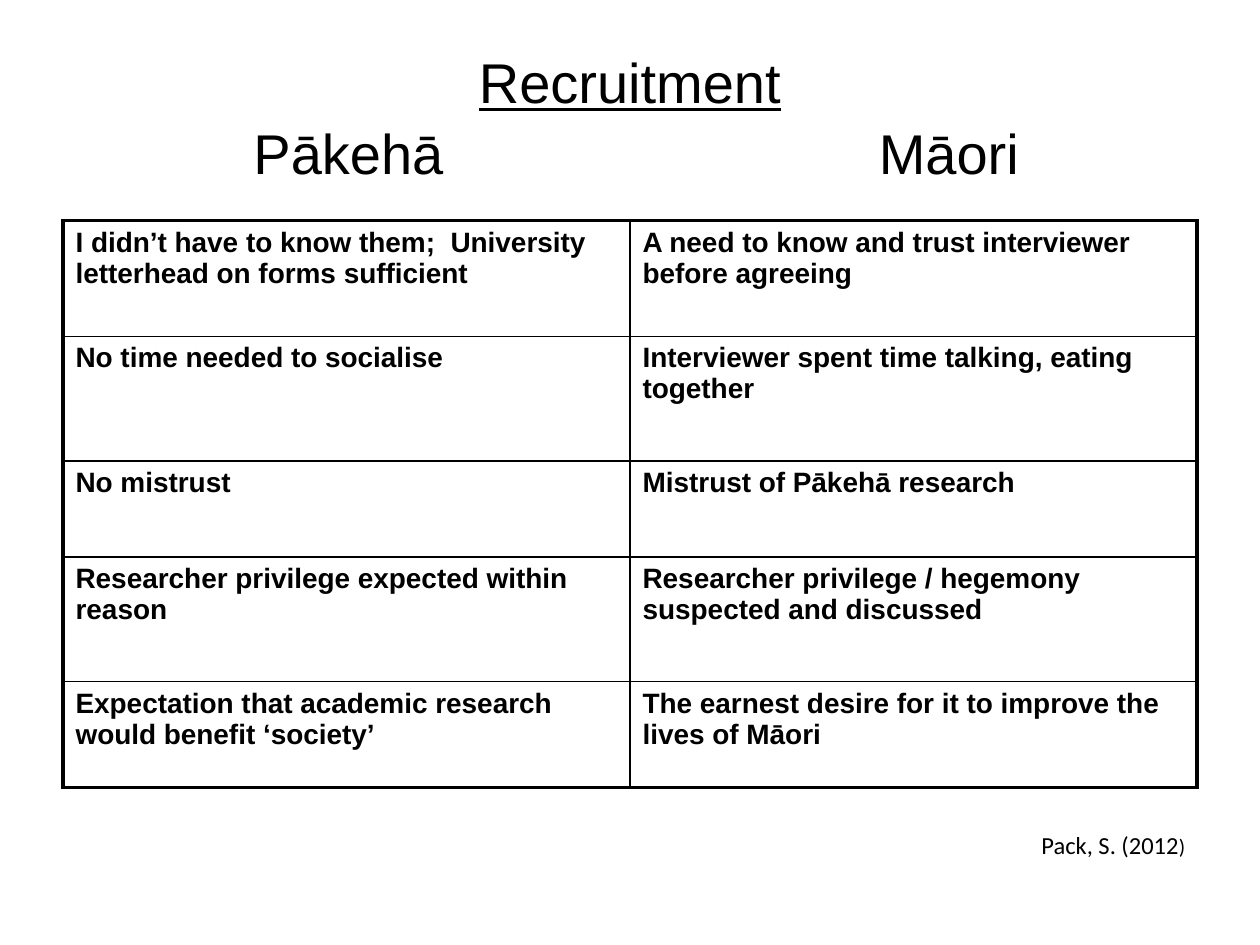
from pptx import Presentation
from pptx.dml.color import RGBColor
from pptx.enum.text import MSO_ANCHOR as Anchor, MSO_AUTO_SIZE as AutoSize, PP_ALIGN as Align
from pptx.oxml import parse_xml
from pptx.oxml.ns import nsdecls
from pptx.util import Pt

BLACK = RGBColor(0, 0, 0)
WHITE = RGBColor(255, 255, 255)
THIN, THICK = 1, 2.25

ROW_HEIGHTS = [66.24, 71.28, 54.72, 71.28, 60.48]
COMPARISONS = [
    ("I didn’t have to know them;  University letterhead on forms sufficient",
     "A need to know and trust interviewer before agreeing"),
    ("No time needed to socialise",
     "Interviewer spent time talking, eating together"),
    ("No mistrust", "Mistrust of Pākehā research"),
    ("Researcher privilege expected within reason",
     "Researcher privilege / hegemony suspected and discussed"),
    ("Expectation that academic research would benefit ‘society’",
     "The earnest desire for it to improve the lives of Māori"),
]


def set_borders(cell, **widths):
    """Draw the cell edges; widths maps lnL, lnR, lnT and lnB to points."""
    properties = cell._tc.get_or_add_tcPr()
    for index, (edge, width) in enumerate(widths.items()):
        properties.insert(index, parse_xml(
            f'<a:{edge} {nsdecls("a")} w="{Pt(width)}"><a:solidFill>'
            f'<a:srgbClr val="{BLACK}"/></a:solidFill></a:{edge}>'))


class SlideBuilder:
    heading_font = "Arial"
    source_font = "Calibri"

    def __init__(self, slide):
        self.slide = slide

    def style(self, target, name, size, bold=False):
        font = target.font
        font.name, font.size, font.bold = name, Pt(size), bold
        font.color.rgb = BLACK

    def title(self, heading, columns, centres, left, top, width, height):
        """Underlined heading above column names centred on tab stops."""
        title = self.slide.shapes.title
        title.left, title.top, title.width, title.height = map(Pt, (left, top, width, height))
        frame = title.text_frame
        frame.auto_size = AutoSize.NONE
        frame.vertical_anchor = Anchor.MIDDLE

        topic = frame.paragraphs[0]
        topic.text = heading
        topic.alignment = Align.CENTER
        self.style(topic, self.heading_font, 32)
        topic.font.underline = True

        names = frame.add_paragraph()
        names.text = "".join("\t" + column for column in columns)
        names.alignment = Align.LEFT
        names.space_before = Pt(2)
        self.style(names, self.heading_font, 32)
        stops = "".join(f'<a:tab pos="{Pt(centre)}" algn="ctr"/>' for centre in centres)
        names._p.get_or_add_pPr().insert_element_before(
            parse_xml(f'<a:tabLst {nsdecls("a")}>{stops}</a:tabLst>'), "a:defRPr", "a:extLst")

    def table(self, rows, heights, left, top, width):
        columns = len(rows[0])
        table = self.slide.shapes.add_table(
            len(rows), columns, Pt(left), Pt(top), Pt(width), Pt(sum(heights))).table
        table.first_row = table.horz_banding = False
        for column in table.columns:
            column.width = Pt(width / columns)
        for r, (row, height) in enumerate(zip(rows, heights)):
            table.rows[r].height = Pt(height)
            for c, statement in enumerate(row):
                cell = table.cell(r, c)
                cell.fill.solid()
                cell.fill.fore_color.rgb = WHITE
                cell.text = statement
                self.style(cell.text_frame.paragraphs[0], self.heading_font, 16, bold=True)
                set_borders(cell,
                            lnL=THICK if c == 0 else THIN,
                            lnR=THICK if c == columns - 1 else THIN,
                            lnT=THICK if r == 0 else THIN,
                            lnB=THICK if r == len(rows) - 1 else THIN)

    def citation(self, parts, left, top, width, height):
        """One line of text made of (wording, size) parts."""
        box = self.slide.shapes.add_textbox(Pt(left), Pt(top), Pt(width), Pt(height))
        frame = box.text_frame
        frame.word_wrap = False
        frame.auto_size = AutoSize.SHAPE_TO_FIT_TEXT
        line = frame.paragraphs[0]
        line.line_spacing = 1.15
        line.space_after = Pt(10)
        for wording, size in parts:
            run = line.add_run()
            run.text = wording
            self.style(run, self.source_font, size)


def main():
    deck = Presentation()
    deck.slide_width, deck.slide_height = Pt(720), Pt(540)
    title_only = deck.slide_layouts[5]
    builder = SlideBuilder(deck.slides.add_slide(title_only))
    builder.title("Recruitment", ("Pākehā", "Māori"), (156, 499), 36, 21.6, 648, 90)
    builder.table(COMPARISONS, ROW_HEIGHTS, 36, 126, 648)
    builder.citation([("Pack, S. (2012", 14), (")", 12)], 588, 468, 97.2, 26.6)
    deck.save("out.pptx")


if __name__ == "__main__":
    main()
